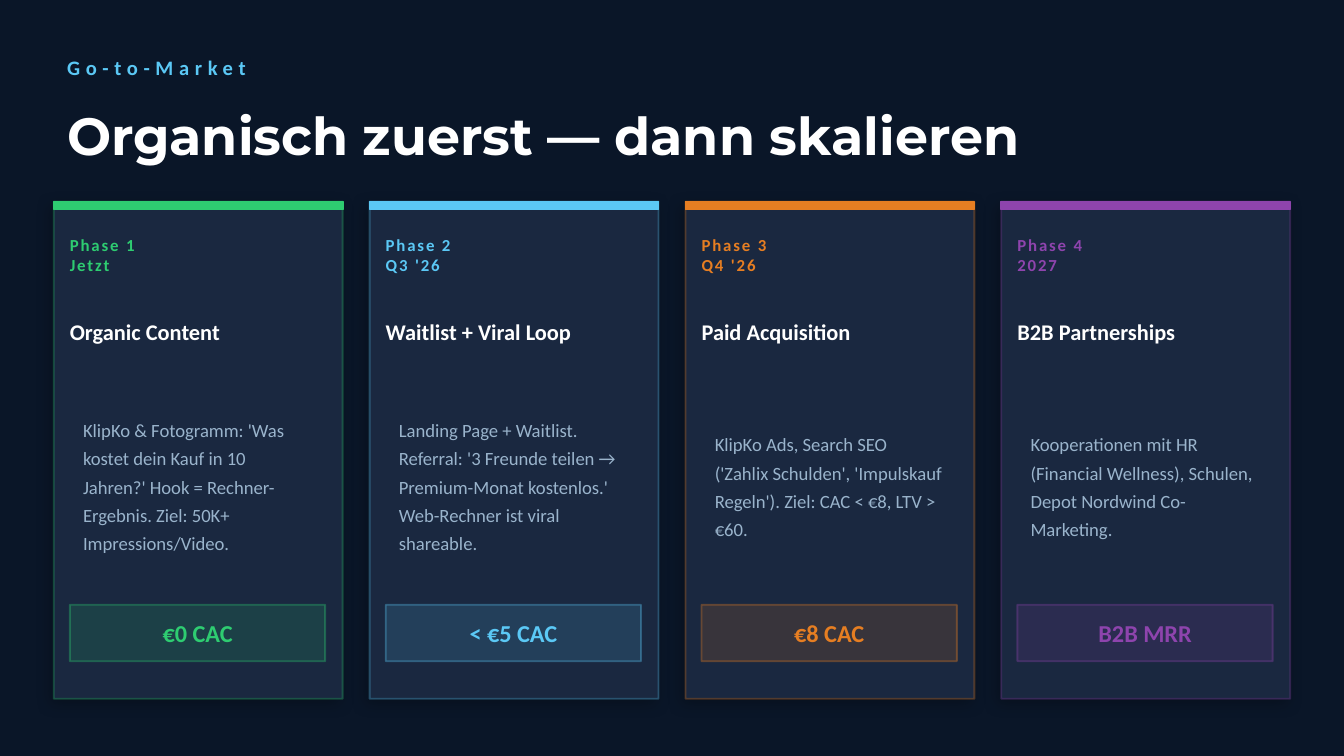
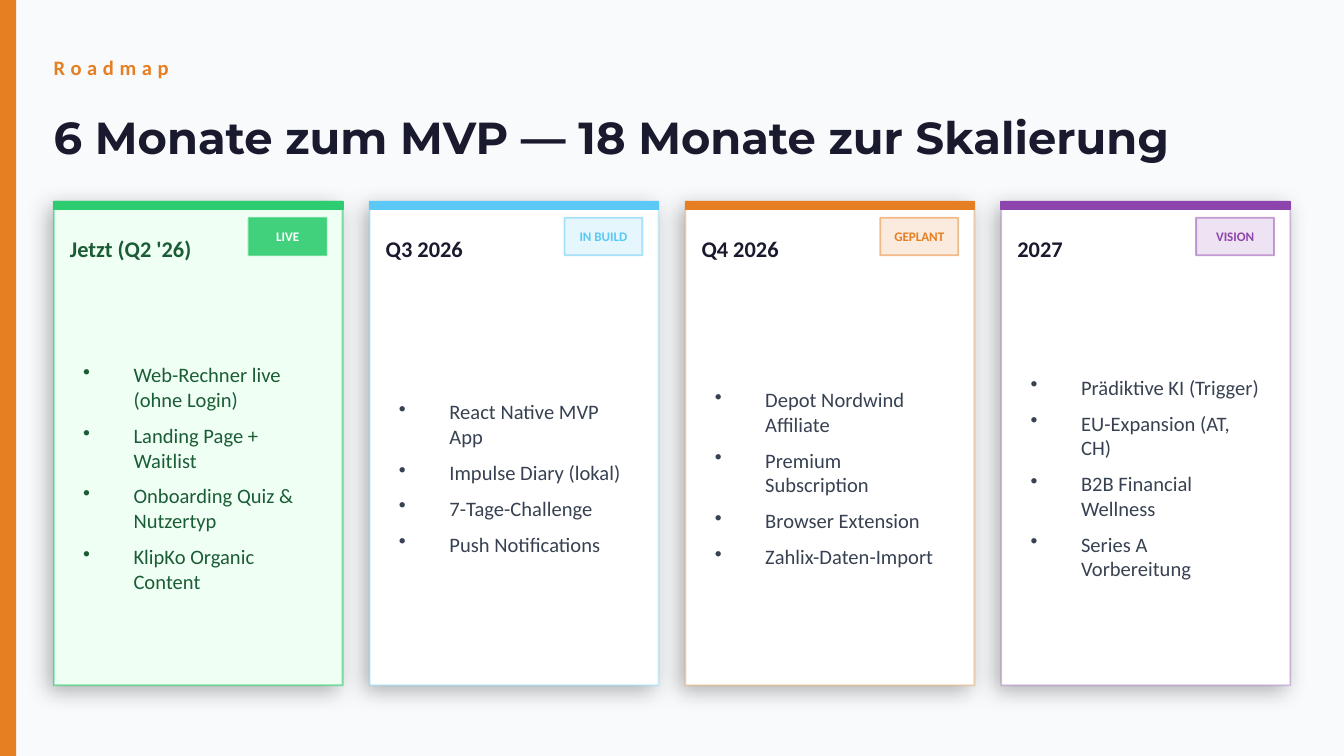
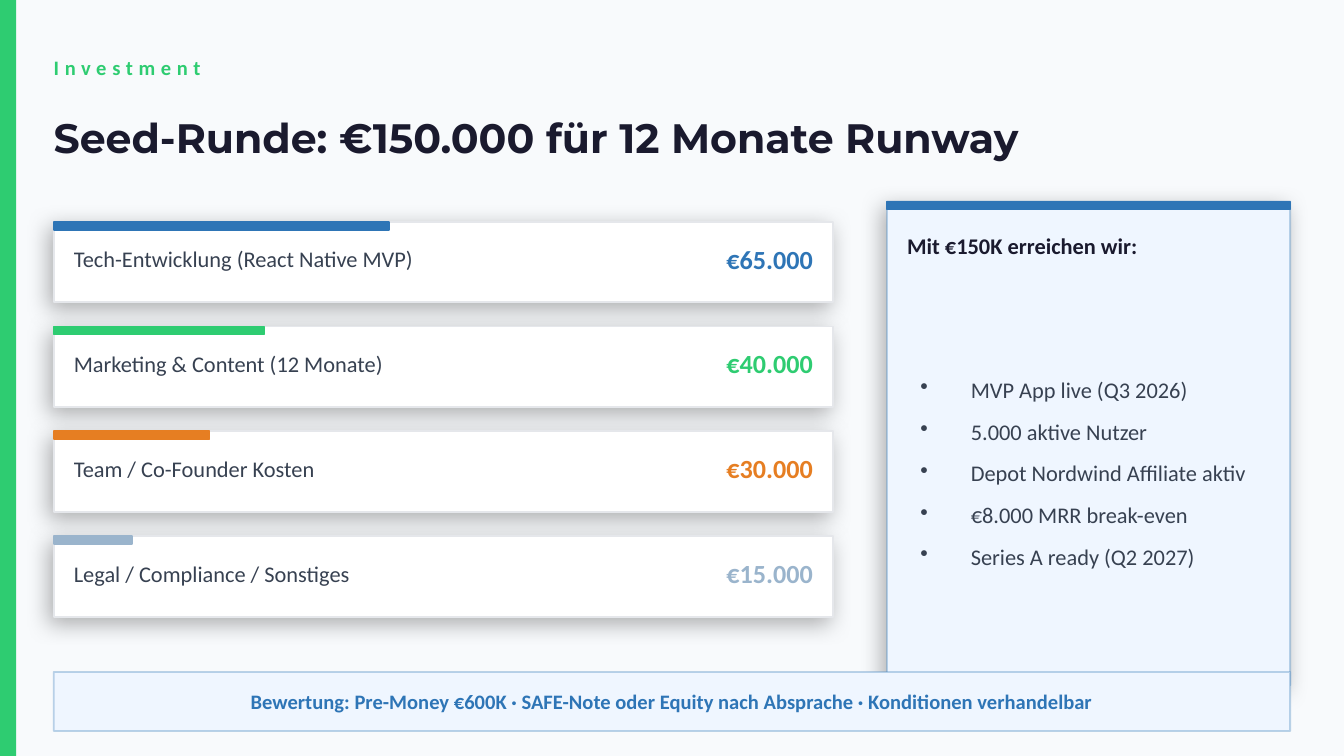
from lxml.etree import SubElement
from pptx import Presentation
from pptx.dml.color import RGBColor
from pptx.enum.shapes import MSO_SHAPE
from pptx.enum.text import MSO_ANCHOR, PP_ALIGN
from pptx.oxml.ns import qn
from pptx.util import Inches, Pt

NAVY = RGBColor(0x0A, 0x16, 0x28)
NAVY_CARD = RGBColor(0x1A, 0x28, 0x40)
PAPER = RGBColor(0xF8, 0xFA, 0xFC)
WHITE = RGBColor(0xFF, 0xFF, 0xFF)
INK = RGBColor(0x1A, 0x1A, 0x2E)
SLATE = RGBColor(0x37, 0x41, 0x51)
MIST = RGBColor(0x9A, 0xB4, 0xCC)
RULE = RGBColor(0xE5, 0xE7, 0xEB)
GREEN = RGBColor(0x2E, 0xCC, 0x71)
GREEN_PALE = RGBColor(0xF0, 0xFF, 0xF4)
GREEN_DARK = RGBColor(0x1A, 0x5C, 0x35)
SKY = RGBColor(0x5B, 0xC8, 0xF5)
ORANGE = RGBColor(0xE6, 0x7E, 0x22)
PURPLE = RGBColor(0x8E, 0x44, 0xAD)
BLUE = RGBColor(0x2E, 0x75, 0xB6)
BLUE_PALE = RGBColor(0xEF, 0xF6, 0xFF)

COLUMNS, ROWS = 100, 56.25
CELL = Inches(10) // COLUMNS
MARGIN = 4
CONTENT_WIDTH = COLUMNS - 2 * MARGIN
CARD_TOP, CARD_WIDTH, CARD_GAP = 15, 21.5, 2
CARD_PAD = 1.2
BAND = 0.6
SHADOW_DARK = (25, 8, 3)
SHADOW_LIGHT = (30, 12, 4)

PHASES = [
    (["Phase 1", "Jetzt"], "Organic Content",
     "KlipKo & Fotogramm: 'Was kostet dein Kauf in 10 Jahren?' Hook = "
     "Rechner-Ergebnis. Ziel: 50K+ Impressions/Video.", "€0 CAC", GREEN),
    (["Phase 2", "Q3 '26"], "Waitlist + Viral Loop",
     "Landing Page + Waitlist. Referral: '3 Freunde teilen → Premium-Monat "
     "kostenlos.' Web-Rechner ist viral shareable.", "< €5 CAC", SKY),
    (["Phase 3", "Q4 '26"], "Paid Acquisition",
     "KlipKo Ads, Search SEO ('Zahlix Schulden', 'Impulskauf Regeln'). "
     "Ziel: CAC < €8, LTV > €60.", "€8 CAC", ORANGE),
    (["Phase 4", "2027"], "B2B Partnerships",
     "Kooperationen mit HR (Financial Wellness), Schulen, "
     "Depot Nordwind Co-Marketing.", "B2B MRR", PURPLE),
]

MILESTONES = [
    ("Jetzt (Q2 '26)", "LIVE", GREEN,
     ["Web-Rechner live (ohne Login)", "Landing Page + Waitlist",
      "Onboarding Quiz & Nutzertyp", "KlipKo Organic Content"]),
    ("Q3 2026", "IN BUILD", SKY,
     ["React Native MVP App", "Impulse Diary (lokal)",
      "7-Tage-Challenge", "Push Notifications"]),
    ("Q4 2026", "GEPLANT", ORANGE,
     ["Depot Nordwind Affiliate", "Premium Subscription",
      "Browser Extension", "Zahlix-Daten-Import"]),
    ("2027", "VISION", PURPLE,
     ["Prädiktive KI (Trigger)", "EU-Expansion (AT, CH)",
      "B2B Financial Wellness", "Series A Vorbereitung"]),
]

BUDGET = [
    ("Tech-Entwicklung (React Native MVP)", "€65.000", 0.43, BLUE),
    ("Marketing & Content (12 Monate)", "€40.000", 0.27, GREEN),
    ("Team / Co-Founder Kosten", "€30.000", 0.2, ORANGE),
    ("Legal / Compliance / Sonstiges", "€15.000", 0.1, MIST),
]

GOALS = ["MVP App live (Q3 2026)", "5.000 aktive Nutzer",
         "Depot Nordwind Affiliate aktiv", "€8.000 MRR break-even",
         "Series A ready (Q2 2027)"]


def grid(*cells):
    return [round(cell * CELL) for cell in cells]


def set_opacity(fill, percent):
    colour = fill.find(".//" + qn("a:srgbClr"))
    SubElement(colour, qn("a:alpha"), val=str(percent * 1000))


def write(frame, text, size=11, color=SLATE, bold=False, font="Calibri",
          align=PP_ALIGN.LEFT, tracking=0, leading=None, after=None, bullet=False):
    lines = [text] if isinstance(text, str) else text
    for index, line in enumerate(lines):
        paragraph = frame.add_paragraph() if index else frame.paragraphs[0]
        if bullet:
            indent, = grid(3.75)
            properties = paragraph._p.get_or_add_pPr()
            properties.set("marL", str(indent))
            properties.set("indent", str(-indent))
            SubElement(properties, qn("a:buChar"), char="•")
        paragraph.alignment = align
        if leading:
            paragraph.line_spacing = leading
        if after:
            paragraph.space_after = Pt(after)
        run = paragraph.add_run()
        run.text = line
        run.font.name = font
        run.font.size = Pt(size)
        run.font.bold = bold
        run.font.color.rgb = color
        if tracking:
            run._r.get_or_add_rPr().set("spc", str(tracking * 100))


class Deck:
    def __init__(self):
        self.presentation = Presentation()
        self.presentation.slide_width, self.presentation.slide_height = grid(COLUMNS, ROWS)
        self.slide = None

    def new_slide(self, background):
        self.slide = self.presentation.slides.add_slide(self.presentation.slide_layouts[6])
        self.slide.background.fill.solid()
        self.slide.background.fill.fore_color.rgb = background

    def text(self, area, text, padded=False, **style):
        frame = self.slide.shapes.add_textbox(*grid(*area)).text_frame
        frame.word_wrap = True
        frame.vertical_anchor = MSO_ANCHOR.MIDDLE
        if not padded:
            frame.margin_left = frame.margin_right = 0
            frame.margin_top = frame.margin_bottom = 0
        write(frame, text, **style)

    def box(self, area, fill, line=None, opacity=100, line_opacity=100, shadow=None):
        shape = self.slide.shapes.add_shape(MSO_SHAPE.RECTANGLE, *grid(*area))
        shape.shadow.inherit = False
        shape.fill.solid()
        shape.fill.fore_color.rgb = fill
        properties = shape._element.spPr
        if opacity < 100:
            set_opacity(properties.find(qn("a:solidFill")), opacity)
        if line is None:
            shape.line.fill.background()
        else:
            shape.line.color.rgb = line
            shape.line.width = Pt(1)
            if line_opacity < 100:
                set_opacity(properties.find(qn("a:ln")), line_opacity)
        if shadow:
            strength, blur, distance = shadow
            outer = SubElement(properties.find(qn("a:effectLst")), qn("a:outerShdw"),
                               blurRad=str(Pt(blur)), dist=str(Pt(distance)),
                               dir=str(135 * 60000), algn="bl", rotWithShape="0")
            SubElement(outer, qn("a:srgbClr"), val="000000")
            set_opacity(outer, strength)

    def card(self, area, fill, accent, line=None, line_opacity=30,
             shadow=SHADOW_LIGHT, share=1):
        left, top, width, _ = area
        self.box(area, fill, line or accent, line_opacity=line_opacity, shadow=shadow)
        self.box((left, top, width * share, BAND), accent, accent)

    def chip(self, area, label, accent, size, color=None, opacity=15,
             line_opacity=35, inset=0):
        left, top, width, height = area
        self.box(area, accent, accent, opacity, line_opacity)
        self.text((left, top + inset, width, height - 2 * inset), label, size=size,
                  color=color or accent, bold=True, align=PP_ALIGN.CENTER)

    def heading(self, topic, title, accent, size, color=INK, left=MARGIN, top=7.2):
        width = COLUMNS - left - min(left, 5)
        self.text((left, 3, width, 4), topic, color=accent, bold=True, tracking=3)
        self.text((left, top, width, 6), title, size=size, color=color,
                  bold=True, font="Montserrat")

    def light_slide(self, topic, title, accent, size):
        self.new_slide(PAPER)
        self.box((0, 0, 1.2, ROWS), accent)
        self.heading(topic, title, accent, size)


def card_left(index):
    return MARGIN + index * (CARD_WIDTH + CARD_GAP)


def build_go_to_market(deck):
    deck.new_slide(NAVY)
    deck.heading("Go-to-Market", "Organisch zuerst — dann skalieren", SKY, 28,
                 color=WHITE, left=5, top=7)
    for index, (phase, channel, plan, target, accent) in enumerate(PHASES):
        left = card_left(index)
        inner = left + CARD_PAD
        deck.card((left, CARD_TOP, CARD_WIDTH, 37), NAVY_CARD, accent, shadow=SHADOW_DARK)
        deck.text((inner, 16.2, 19, 5.5), phase, size=9, color=accent, bold=True, tracking=1)
        deck.text((inner, 22.2, 19, 5), channel, size=12, color=WHITE, bold=True)
        deck.text((inner, 28, 19, 16), plan, padded=True, size=10, color=MIST, leading=1.25)
        deck.chip((inner, 45, 19, 4.2), target, accent, 13, inset=0.2)


def build_roadmap(deck):
    deck.light_slide("Roadmap", "6 Monate zum MVP — 18 Monate zur Skalierung", ORANGE, 24)
    for index, (date, status, accent, steps) in enumerate(MILESTONES):
        live = status == "LIVE"
        left = card_left(index)
        inner = left + CARD_PAD
        deck.card((left, CARD_TOP, CARD_WIDTH, 36), GREEN_PALE if live else WHITE,
                  accent, line_opacity=60 if live else 30)
        deck.chip((left + 14.5, 16.2, 5.8, 2.8), status, accent, 7,
                  color=WHITE if live else accent, opacity=90 if live else 15,
                  line_opacity=50)
        deck.text((inner, 16.4, 13, 4.2), date, size=12,
                  color=GREEN_DARK if live else INK, bold=True)
        deck.text((inner, 21.8, 19.2, 27.5), steps, padded=True,
                  color=GREEN_DARK if live else SLATE, after=6, bullet=True)


def build_investment(deck):
    deck.light_slide("Investment", "Seed-Runde: €150.000 für 12 Monate Runway", GREEN, 22)
    for index, (purpose, amount, share, accent) in enumerate(BUDGET):
        top = 16.5 + index * 7.8
        deck.card((MARGIN, top, 58, 6), WHITE, accent, line=RULE,
                  line_opacity=100, share=share)
        deck.text((5.5, top + 1, 40, 3.5), purpose, size=12)
        deck.text((46, top + 1, 14.5, 3.5), amount, size=14, color=accent,
                  bold=True, align=PP_ALIGN.RIGHT)
    deck.card((66, CARD_TOP, 30, 36), BLUE_PALE, BLUE)
    deck.text((67.5, 16.2, 27, 4.2), "Mit €150K erreichen wir:", size=12, color=INK, bold=True)
    deck.text((67.5, 21.2, 27, 28), GOALS, padded=True, size=12, after=8, bullet=True)
    deck.box((MARGIN, 50, CONTENT_WIDTH, 4.4), BLUE_PALE, BLUE, line_opacity=30)
    deck.text((6, 50.3, 88, 3.8),
              "Bewertung: Pre-Money €600K · SAFE-Note oder Equity nach Absprache"
              " · Konditionen verhandelbar",
              padded=True, color=BLUE, bold=True, align=PP_ALIGN.CENTER)


def main():
    deck = Deck()
    build_go_to_market(deck)
    build_roadmap(deck)
    build_investment(deck)
    deck.presentation.save("out.pptx")


if __name__ == "__main__":
    main()
